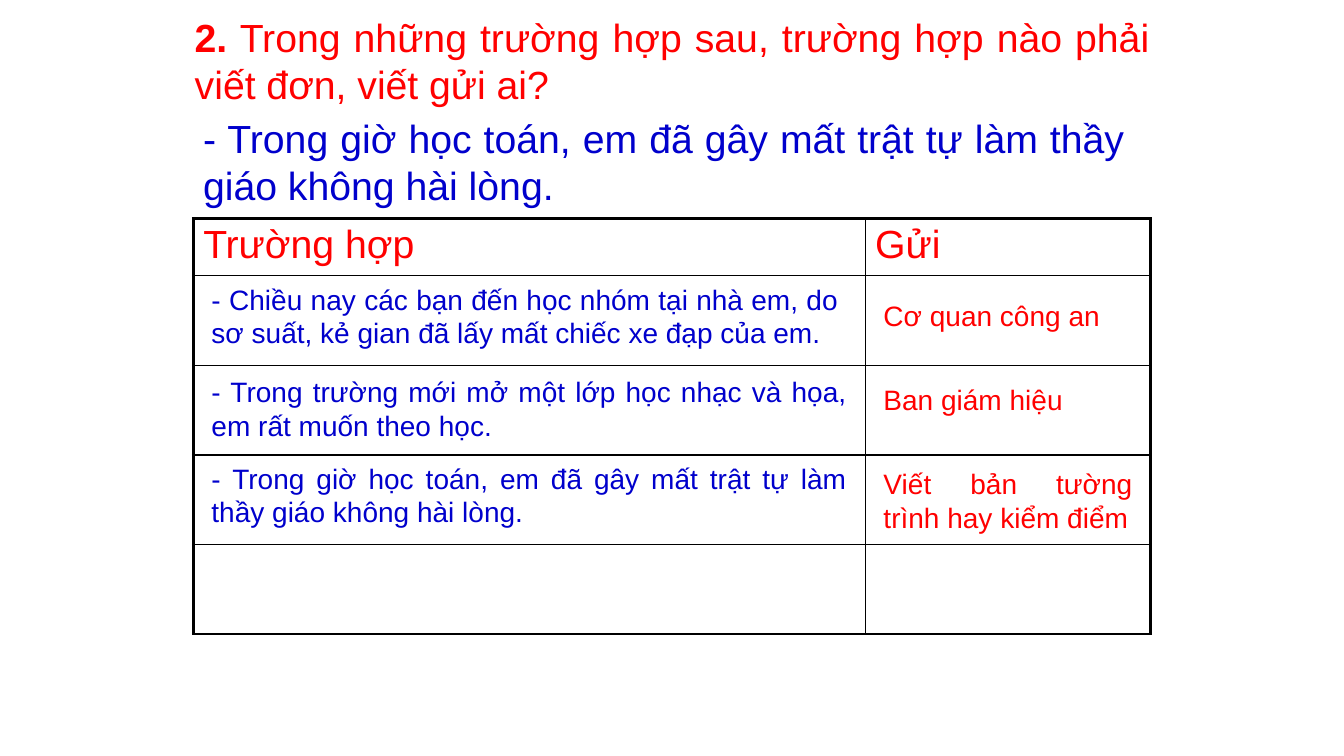
from lxml.etree import SubElement
from pptx import Presentation
from pptx.dml.color import RGBColor
from pptx.enum.text import MSO_AUTO_SIZE as AUTO, PP_ALIGN as ALIGN
from pptx.oxml.ns import qn
from pptx.util import Pt

RED, BLUE, BLACK = "FF0000", "0000CC", "000000"
THIN, THICK = 1, 2.25


def rgb(color):
    return RGBColor.from_string(color)


def add_run(p, text, size=20, color=RED, bold=False):
    r = p.add_run()
    r.text = text
    r.font.name = "Arial"
    r.font.size = Pt(size)
    r.font.bold = bold
    r.font.color.rgb = rgb(color)


def add_text(s, text, x, y, w, h, lead="", justify=True, **fmt):
    """Add a wrapped text box, optionally opening with a bold lead."""
    tf = s.shapes.add_textbox(Pt(x), Pt(y), Pt(w), Pt(h)).text_frame
    tf.word_wrap = True
    tf.auto_size = AUTO.SHAPE_TO_FIT_TEXT
    p = tf.paragraphs[0]
    p.alignment = ALIGN.JUSTIFY if justify else ALIGN.LEFT
    if lead:
        add_run(p, lead, bold=True, **fmt)
    add_run(p, text, **fmt)


def set_border(cell, side, width):
    ln = SubElement(cell._tc.get_or_add_tcPr(), qn(f"a:ln{side}"), w=str(Pt(width)))
    fill = SubElement(ln, qn("a:solidFill"))
    SubElement(fill, qn("a:srgbClr"), val=BLACK)


def add_grid(s, x, y, widths, heights, headers):
    """Add a table with a thick frame, thin inner lines and a header row."""
    rows, cols = len(heights), len(widths)
    table = s.shapes.add_table(rows, cols, Pt(x), Pt(y),
                               Pt(sum(widths)), Pt(sum(heights))).table
    table.first_row = table.horz_banding = False
    for col, width in zip(table.columns, widths):
        col.width = Pt(width)
    for row, height in zip(table.rows, heights):
        row.height = Pt(height)
    for i in range(rows):
        for j in range(cols):
            cell = table.cell(i, j)
            outer = {"L": j == 0, "R": j == cols - 1,
                     "T": i == 0, "B": i == rows - 1}
            for side, is_outer in outer.items():
                set_border(cell, side, THICK if is_outer else THIN)
            cell.fill.background()
    for j, header in enumerate(headers):
        add_run(table.cell(0, j).text_frame.paragraphs[0], header, size=28)


def main():
    prs = Presentation()
    prs.slide_width, prs.slide_height = Pt(960), Pt(540)
    s = prs.slides.add_slide(prs.slide_layouts[6])

    # Question and the case under discussion
    last_case = "- Trong giờ học toán, em đã gây mất trật tự làm thầy giáo không hài lòng."
    add_text(s, " Trong những trường hợp sau, trường hợp nào phải viết đơn, viết gửi ai?",
             132, 6, 696, 74, lead="2.", size=28)
    add_text(s, last_case, 138, 78, 672, 74, size=28, color=BLUE)

    # Answer grid
    add_grid(s, 138, 156, [480, 204], [41] + [64] * 4, ["Trường hợp", "Gửi"])

    # Cases: text, top, width
    cases = [
        ("- Chiều nay các bạn đến học nhóm tại nhà em, do sơ suất, "
         "kẻ gian đã lấy mất chiếc xe đạp của em.", 198, 462),
        ("- Trong trường mới mở một lớp học nhạc và họa, em rất muốn theo học.",
         264, 468),
        (last_case, 326, 468),
    ]
    for text, y, w in cases:
        add_text(s, text, 144, y, w, 55.5, color=BLUE)

    # Recipients: text, top, width, height, justified
    recipients = [
        ("Cơ quan công an", 210, 180, 31, False),
        ("Ban giám hiệu", 270, 180, 31, False),
        ("Viết bản tường trình hay kiểm điểm", 330, 192, 55.5, True),
    ]
    for text, y, w, h, justify in recipients:
        add_text(s, text, 624, y, w, h, justify=justify)

    prs.save("out.pptx")


if __name__ == "__main__":
    main()
